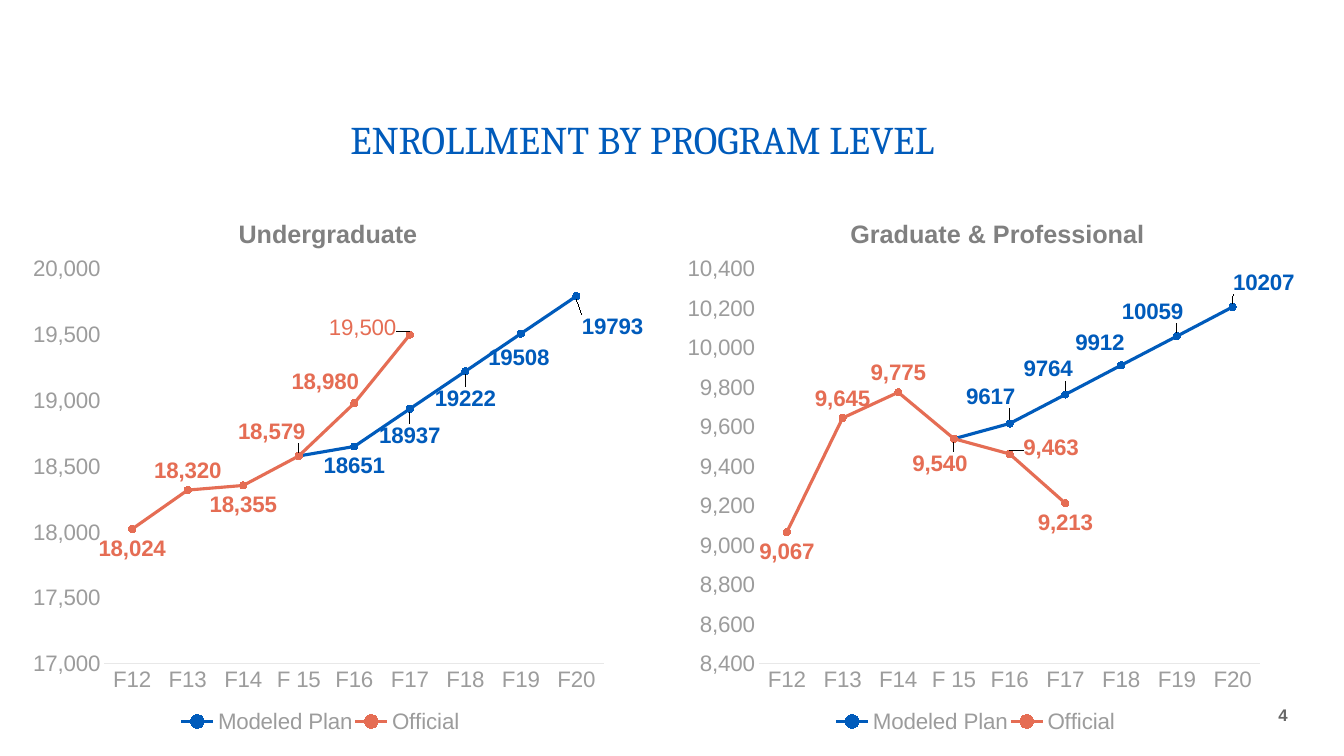
"""Build the enrollment slide with one line chart per program level."""
from dataclasses import dataclass, field

from lxml import etree
from pptx import Presentation
from pptx import util as u
from pptx.chart.data import CategoryChartData
from pptx.dml.color import RGBColor
from pptx.enum import chart as ch, text
from pptx.oxml import ns

BLUE, CORAL = "005BBB", "E56D54"
ABOVE, BELOW = ch.XL_LABEL_POSITION.ABOVE, ch.XL_LABEL_POSITION.BELOW
TERMS = ["F12", "F13", "F14", "F 15", "F16", "F17", "F18", "F19", "F20"]
CHART_W, CHART_H = 6.14, 5.52


@dataclass
class Label:
    """Placement of one value label, shifted in inches from its side."""
    term: int
    side: ch.XL_LABEL_POSITION
    dx: float = 0
    dy: float = 0
    bold: bool = True


@dataclass
class Trend:
    """One enrollment line with its label settings."""
    name: str
    counts: list[int | None]
    color: str
    number_format: str
    side: ch.XL_LABEL_POSITION
    labels: list[Label]
    unlabeled: list[int] = field(default_factory=list)


@dataclass
class Level:
    """One program level with its axis range and trends."""
    title: str
    left: float
    title_x: float
    low: int
    high: int
    step: int
    trends: list[Trend]


def plan(counts: list[int], side: ch.XL_LABEL_POSITION, labels: list[Label]) -> Trend:
    """Describe the modeled line, which starts in F 15."""
    return Trend("Modeled Plan", [None] * 3 + counts, BLUE, "General", side, labels, [3])


def official(counts: list[int], labels: list[Label]) -> Trend:
    """Describe the official line, which ends in F17."""
    return Trend("Official", counts + [None] * 3, CORAL, "#,##0", BELOW, labels)


LEVELS = [
    Level("Undergraduate", 0.24, 0.34, 17000, 20000, 500, [
        plan([18579, 18651, 18937, 19222, 19508, 19793], BELOW, [
            Label(5, BELOW, 0, 0.07), Label(6, BELOW, 0, 0.08),
            Label(7, BELOW, -0.02, 0.04), Label(8, BELOW, 0.36, 0.11)]),
        official([18024, 18320, 18355, 18579, 18980, 19500], [
            Label(1, ABOVE), Label(3, ABOVE, -0.27, -0.05),
            Label(4, ABOVE, -0.29, -0.02), Label(5, ABOVE, -0.47, 0.12, False)])]),
    Level("Graduate & Professional", 6.73, 0.27, 8400, 10400, 200, [
        plan([9540, 9617, 9764, 9912, 10059, 10207], ABOVE, [
            Label(4, ABOVE, -0.19, -0.07), Label(5, ABOVE, -0.17, -0.06),
            Label(6, ABOVE, -0.21, -0.03), Label(7, ABOVE, -0.24, -0.05),
            Label(8, ABOVE, 0.31, -0.05)]),
        official([9067, 9645, 9775, 9540, 9463, 9213], [
            Label(1, ABOVE), Label(2, ABOVE), Label(3, BELOW, -0.14, 0.05),
            Label(4, ABOVE, 0.41, 0.13), Label(5, BELOW)])]),
]


def style(font, size: float, color: str, bold: bool = False, name: str = "Arial") -> None:
    """Format a font."""
    font.size, font.bold, font.name = u.Pt(size), bold, name
    font.color.rgb = RGBColor.from_string(color)


def add_xml(parent, tag: str, value: str | None = None, index: int | None = None):
    """Insert a chart element, at the end unless an index is given."""
    child = etree.SubElement(parent, ns.qn(f"c:{tag}"))
    if value is not None:
        child.set("val", value)
    if index is not None:
        parent.insert(index, child)
    return child


def place(part, index: int, modes: dict[str, str], **box: float) -> None:
    """Give a chart part a manual layout in fractions of the chart."""
    for old in part.findall(ns.qn("c:layout")):
        part.remove(old)
    manual = add_xml(add_xml(part, "layout", index=index), "manualLayout")
    for tag, value in modes.items():
        add_xml(manual, tag, value)
    for tag, fraction in box.items():
        add_xml(manual, tag, f"{fraction:.4f}")


def format_trend(series, trend: Trend) -> None:
    """Format one line, its markers and its labels."""
    color = RGBColor.from_string(trend.color)
    series.smooth = False
    series.format.line.width = u.Pt(2.25)
    series.format.line.color.rgb = color
    series.marker.style, series.marker.size = ch.XL_MARKER_STYLE.CIRCLE, 5
    series.marker.format.fill.solid()
    series.marker.format.fill.fore_color.rgb = color
    series.marker.format.line.color.rgb = color
    values = series.data_labels
    values.show_value, values.position = True, trend.side
    values.number_format, values.number_format_is_linked = trend.number_format, False
    style(values.font, 16, trend.color, True)
    for label in trend.labels:
        point = series.points[label.term].data_label
        style(point.font, 16, trend.color, label.bold)
        point.position = label.side
        node = series._element.xpath(f"c:dLbls/c:dLbl[c:idx/@val='{label.term}']")[0]
        place(node, 1, {}, x=label.dx / CHART_W, y=label.dy / CHART_H)
    for index, term in enumerate(trend.unlabeled):
        node = add_xml(series._element.find(ns.qn("c:dLbls")), "dLbl", index=index)
        add_xml(node, "idx", str(term))
        add_xml(node, "delete", "1")


def format_axes(chart, level: Level) -> None:
    """Format the term axis and the enrollment axis."""
    terms, counts = chart.category_axis, chart.value_axis
    for axis in (terms, counts):
        axis.has_major_gridlines = False
        axis.major_tick_mark = axis.minor_tick_mark = ch.XL_TICK_MARK.NONE
        style(axis.tick_labels.font, 16, "9C9C9C")
    terms.format.line.color.rgb = RGBColor.from_string("E8E8E8")
    terms.format.line.width = u.Pt(0.75)
    counts.format.line.fill.background()
    counts.minimum_scale, counts.maximum_scale = level.low, level.high
    counts.major_unit = level.step
    counts.tick_labels.number_format = "#,##0"
    counts.tick_labels.number_format_is_linked = False


def add_level(slide, level: Level) -> None:
    """Draw the chart of one program level."""
    enrollment = CategoryChartData()
    enrollment.categories = TERMS
    for trend in level.trends:
        enrollment.add_series(trend.name, trend.counts, trend.number_format)
    chart = slide.shapes.add_chart(
        ch.XL_CHART_TYPE.LINE_MARKERS, u.Inches(level.left), u.Inches(1.84),
        u.Inches(CHART_W), u.Inches(CHART_H), enrollment).chart
    style(chart.font, 10, "666666")
    chart.plots[0].vary_by_categories = False
    heading = chart.chart_title.text_frame
    heading.text = level.title
    style(heading.paragraphs[0].runs[0].font, 18, "808080", True)
    chart.has_legend = True
    chart.legend.position = ch.XL_LEGEND_POSITION.BOTTOM
    chart.legend.include_in_layout = False
    style(chart.legend.font, 16, "9C9C9C")
    format_axes(chart, level)
    for series, trend in zip(chart.plots[0].series, level.trends):
        format_trend(series, trend)
    edges = {"xMode": "edge", "yMode": "edge"}
    place(chart.chart_title._element, 1, edges, x=level.title_x, y=0.05)
    place(chart.legend._element, 1, edges, x=0.25, y=0.95, w=0.46, h=0.05)
    place(chart._chartSpace.chart.plotArea, 0, {"layoutTarget": "inner", **edges},
          x=0.13, y=0.15, w=0.81, h=0.71)


def write(box, words: str, bounds: tuple[float, ...], align: text.PP_ALIGN):
    """Move a text shape, set its words and return its paragraph."""
    box.left, box.top, box.width, box.height = map(u.Inches, bounds)
    frame = box.text_frame
    frame.text, frame.word_wrap = words, True
    frame.vertical_anchor = text.MSO_ANCHOR.MIDDLE
    frame.auto_size = text.MSO_AUTO_SIZE.NONE
    frame.paragraphs[0].alignment = align
    return frame.paragraphs[0]


def main() -> None:
    """Build and save the slide."""
    deck = Presentation()
    deck.slide_width, deck.slide_height = u.Inches(13.33), u.Inches(7.5)
    slide = deck.slides.add_slide(deck.slide_layouts[5])
    title = write(slide.shapes.title, "ENROLLMENT BY PROGRAM LEVEL",
                  (0.62, 1.03, 11.5, 0.78), text.PP_ALIGN.CENTER)
    title.line_spacing = 0.8
    style(title.runs[0].font, 28, BLUE, name="Cambria")
    for level in LEVELS:
        add_level(slide, level)
    page = write(slide.shapes.add_textbox(0, 0, 0, 0), "4",
                 (12.08, 6.8, 0.79, 0.58), text.PP_ALIGN.RIGHT)
    style(page.runs[0].font, 12, "666666", True)
    deck.save("out.pptx")


if __name__ == "__main__":
    main()
